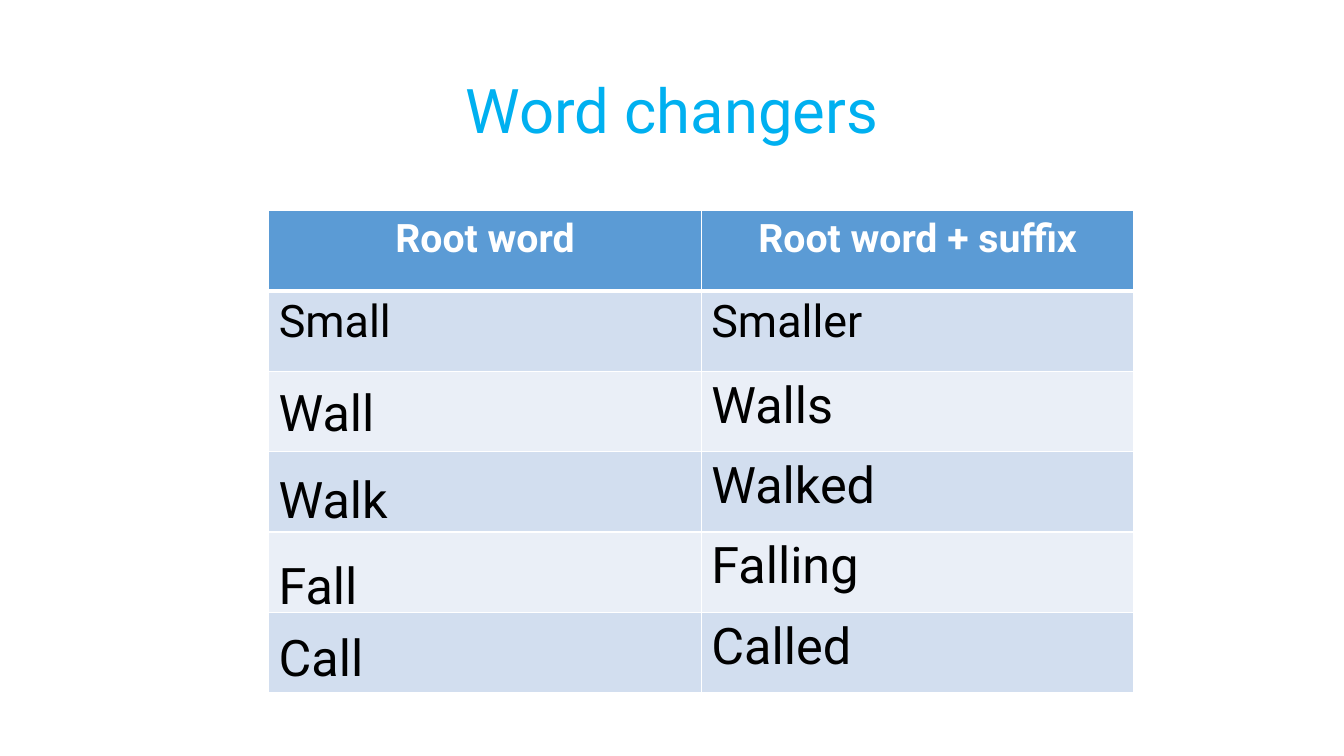
from lxml.etree import SubElement
from pptx import Presentation
from pptx.dml.color import RGBColor
from pptx.enum.text import MSO_ANCHOR as Anchor, MSO_AUTO_SIZE as AutoSize, PP_ALIGN as Align
from pptx.oxml.ns import qn
from pptx.util import Pt

FONT = "Roboto"
SKY = RGBColor(0x00, 0xB0, 0xF0)
BLUE = RGBColor(0x5B, 0x9B, 0xD5)
BAND_DARK = RGBColor(0xD2, 0xDE, 0xEF)
BAND_LIGHT = RGBColor(0xEA, 0xEF, 0xF7)
WHITE = RGBColor(0xFF, 0xFF, 0xFF)
BLACK = RGBColor(0x00, 0x00, 0x00)

HEADINGS = ["Root word", "Root word + suffix"]
SUFFIXED = ["Smaller", "Walls", "Walked", "Falling", "Called"]
ROOT_TOPS = {"Wall": 118, "Walk": 180, "Fall": 242, "Call": 293}


def add_span(para, text, size, color, bold=False):
    """Add one formatted run to a paragraph."""
    span = para.add_run()
    span.text = text
    span.font.name = FONT
    span.font.size = Pt(size)
    span.font.bold = bold
    span.font.color.rgb = color


def add_title(page, left, top, width, height):
    """Place and fill the title placeholder."""
    title = page.shapes.title
    title.left, title.top, title.width, title.height = Pt(left), Pt(top), Pt(width), Pt(height)
    title.text_frame.vertical_anchor = Anchor.MIDDLE
    para = title.text_frame.paragraphs[0]
    para.alignment = Align.CENTER
    para.line_spacing = 0.9
    add_span(para, "Word changers", 44, SKY)


def add_borders(cell, top, bottom):
    """Draw white cell borders, with the given top and bottom widths."""
    properties = cell._tc.get_or_add_tcPr()
    widths = {"a:lnL": 1, "a:lnR": 1, "a:lnT": top, "a:lnB": bottom}
    for tag, width in widths.items():
        line = SubElement(properties, qn(tag), w=str(Pt(width)))
        fill = SubElement(line, qn("a:solidFill"))
        SubElement(fill, qn("a:srgbClr"), val=str(WHITE))


def fill_cell(cell, row, text):
    """Set the borders, band colour and text of one cell."""
    add_borders(cell, 3 if row == 1 else 1, 3 if row == 0 else 1)
    cell.fill.solid()
    cell.fill.fore_color.rgb = BLUE if row == 0 else BAND_DARK if row % 2 else BAND_LIGHT
    para = cell.text_frame.paragraphs[0]
    if row == 0:
        para.alignment = Align.CENTER
        add_span(para, text, 28, WHITE, bold=True)
    elif text:
        add_span(para, text, 32 if row == 1 else 36, BLACK)


def add_word_table(page, left, top, width, height):
    """Build the table of root words and their suffixed forms."""
    rows = [HEADINGS] + [["", word] for word in SUFFIXED]
    rows[1][0] = "Small"
    frame = page.shapes.add_table(len(rows), 2, Pt(left), Pt(top), Pt(width), Pt(height))
    table = frame.table
    for column in table.columns:
        column.width = Pt(width / 2)
    for index, words in enumerate(rows):
        table.rows[index].height = Pt(height / len(rows))
        for cell, word in zip(table.rows[index].cells, words):
            fill_cell(cell, index, word)


def add_root_words(page, left, top, width, height):
    """Lay the loose root words over the first table column."""
    for word, offset in ROOT_TOPS.items():
        box = page.shapes.add_textbox(Pt(left), Pt(top + offset), Pt(width), Pt(height))
        box.text_frame.word_wrap = True
        box.text_frame.auto_size = AutoSize.SHAPE_TO_FIT_TEXT
        add_span(box.text_frame.paragraphs[0], word, 36, BLACK)


def build_slide(deck):
    """Add the word changers slide."""
    page = deck.slides.add_slide(deck.slide_layouts[5])
    add_title(page, 66, 28.75, 828, 104.4)
    add_word_table(page, 192, 150.5, 618, 344.4)
    add_root_words(page, 192, 150.5, 160, 51)


def main():
    """Create and save the deck."""
    deck = Presentation()
    deck.slide_width, deck.slide_height = Pt(960), Pt(540)
    build_slide(deck)
    deck.save("out.pptx")


if __name__ == "__main__":
    main()
